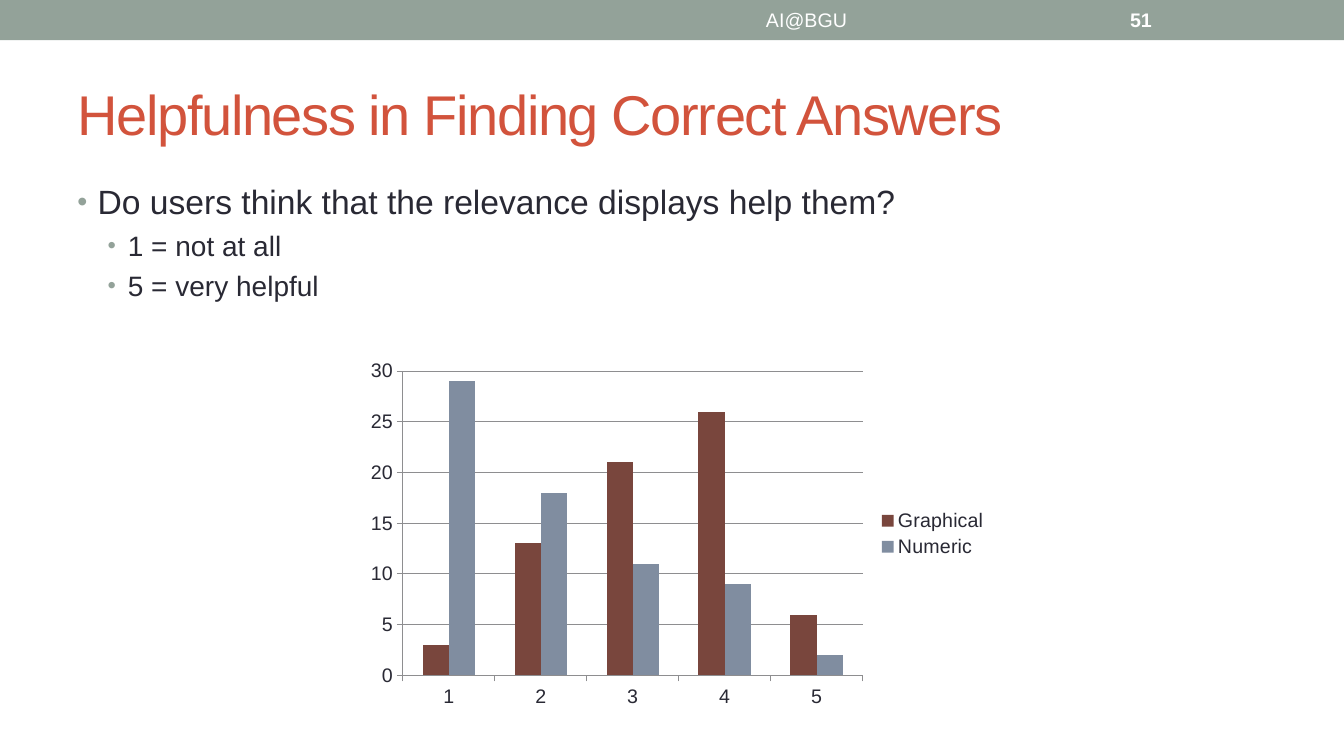
from dataclasses import dataclass

from lxml.etree import SubElement
from pptx import Presentation
from pptx.chart.data import CategoryChartData
from pptx.dml.color import RGBColor
from pptx.enum.chart import XL_CHART_TYPE, XL_LEGEND_POSITION, XL_TICK_MARK
from pptx.enum.shapes import MSO_SHAPE
from pptx.enum.text import MSO_ANCHOR, PP_ALIGN
from pptx.oxml.ns import qn
from pptx.util import Inches, Pt

SAGE, RUST, INK, WHITE, GRID = "93A299", "D2533C", "292934", "FFFFFF", "8E8E90"
FONT = "Arial"


@dataclass
class Bullet:
    text: str
    size: float
    level: int
    indent: float
    space_before: float


@dataclass
class HeaderLabel:
    text: str
    left: float
    width: float
    align: PP_ALIGN
    bold: bool


@dataclass
class Series:
    name: str
    values: tuple[int, ...]
    color: str


BULLETS = [
    Bullet("Do users think that the relevance displays help them?", 24, 0, 0.2, 0),
    Bullet("1 = not at all", 20, 1, 0.5, 4.8),
    Bullet("5 = very helpful", 20, 1, 0.5, 4.8),
]
LABELS = [
    HeaderLabel("AI@BGU", 5, 6, PP_ALIGN.CENTER, False),
    HeaderLabel("51", 11.11, 1.56, PP_ALIGN.LEFT, True),
]
SERIES = [
    Series("Graphical", (3, 13, 21, 26, 6), "79463D"),
    Series("Numeric", (29, 18, 11, 9, 2), "808DA0"),
]


def rgb(color: str) -> RGBColor:
    return RGBColor.from_string(color)


def apply(target, values: dict) -> None:
    for name, value in values.items():
        setattr(target, name, value)


def set_font(font, size: float, color: str, bold: bool = False) -> None:
    apply(font, {"name": FONT, "size": Pt(size), "bold": bold})
    font.color.rgb = rgb(color)


def place(shape, left: float, top: float, width: float, height: float) -> None:
    apply(shape, {"left": Inches(left), "top": Inches(top),
                  "width": Inches(width), "height": Inches(height)})


def add_text_box(page, left: float, top: float, width: float, height: float, anchor):
    box = page.shapes.add_textbox(
        Inches(left), Inches(top), Inches(width), Inches(height))
    apply(box.text_frame, {"word_wrap": True, "vertical_anchor": anchor})
    return box.text_frame


def draw_band(page) -> None:
    band = page.shapes.add_shape(MSO_SHAPE.RECTANGLE, 0, 0, Inches(13.33), Inches(0.4))
    band.shadow.inherit = False
    band.fill.solid()
    band.fill.fore_color.rgb = rgb(SAGE)
    band.line.fill.background()


def draw_title(page, text: str) -> None:
    title = page.shapes.title
    place(title, 0.67, 0.58, 12, 1.08)
    apply(title.text_frame, {"word_wrap": True, "vertical_anchor": MSO_ANCHOR.MIDDLE})
    para = title.text_frame.paragraphs[0]
    para.alignment = PP_ALIGN.LEFT
    span = para.add_run()
    span.text = text
    set_font(span.font, 40, RUST)
    span.font._element.set("spc", "-100")


def draw_bullets(page, bullets: list[Bullet]) -> None:
    frame = add_text_box(page, 0.67, 1.75, 12, 1.4, MSO_ANCHOR.TOP)
    for index, bullet in enumerate(bullets):
        para = frame.add_paragraph() if index else frame.paragraphs[0]
        para.text = bullet.text
        apply(para, {"level": bullet.level, "space_before": Pt(bullet.space_before)})
        properties = para._p.get_or_add_pPr()
        properties.set("marL", str(Inches(bullet.indent)))
        properties.set("indent", str(Inches(-0.2)))
        color = SubElement(properties, qn("a:buClr"))
        SubElement(color, qn("a:srgbClr"), val=SAGE)
        SubElement(properties, qn("a:buSzPct"), val="85000")
        SubElement(properties, qn("a:buFont"), typeface=FONT)
        SubElement(properties, qn("a:buChar"), char="•")
        set_font(para.font, bullet.size, INK)
        set_font(para.runs[0].font, bullet.size, INK)


def draw_label(page, label: HeaderLabel) -> None:
    frame = add_text_box(page, label.left, 0.02, label.width, 0.36, MSO_ANCHOR.MIDDLE)
    para = frame.paragraphs[0]
    para.alignment = label.align
    span = para.add_run()
    span.text = label.text
    set_font(span.font, 14, WHITE, label.bold)


def format_line(line) -> None:
    line.color.rgb = rgb(GRID)
    line.width = Pt(0.75)


def draw_chart(page, series_list: list[Series]) -> None:
    data = CategoryChartData()
    data.categories = [str(score) for score in range(1, 6)]
    for series in series_list:
        data.add_series(series.name, series.values)
    chart = page.shapes.add_chart(
        XL_CHART_TYPE.COLUMN_CLUSTERED,
        Inches(3.55), Inches(3.5), Inches(6.35), Inches(3.59), data).chart
    apply(chart, {"has_title": False, "has_legend": True})
    set_font(chart.font, 14, INK)
    apply(chart.legend, {"position": XL_LEGEND_POSITION.RIGHT, "include_in_layout": False})
    set_font(chart.legend.font, 14, INK)
    for axis in (chart.category_axis, chart.value_axis):
        apply(axis, {"major_tick_mark": XL_TICK_MARK.OUTSIDE,
                     "minor_tick_mark": XL_TICK_MARK.NONE})
        set_font(axis.tick_labels.font, 14, INK)
        format_line(axis.format.line)
    apply(chart.value_axis, {"minimum_scale": 0, "maximum_scale": 30,
                             "major_unit": 5, "has_major_gridlines": True})
    format_line(chart.value_axis.major_gridlines.format.line)
    plot = chart.plots[0]
    apply(plot, {"gap_width": 150, "overlap": 0, "vary_by_categories": False})
    for drawn, series in zip(plot.series, series_list):
        drawn.format.fill.solid()
        drawn.format.fill.fore_color.rgb = rgb(series.color)


def main() -> None:
    deck = Presentation()
    apply(deck, {"slide_width": Inches(13.33), "slide_height": Inches(7.5)})
    page = deck.slides.add_slide(deck.slide_layouts[5])
    draw_band(page)
    draw_title(page, "Helpfulness in Finding Correct Answers")
    draw_bullets(page, BULLETS)
    draw_chart(page, SERIES)
    for label in LABELS:
        draw_label(page, label)
    deck.save("out.pptx")


if __name__ == "__main__":
    main()
